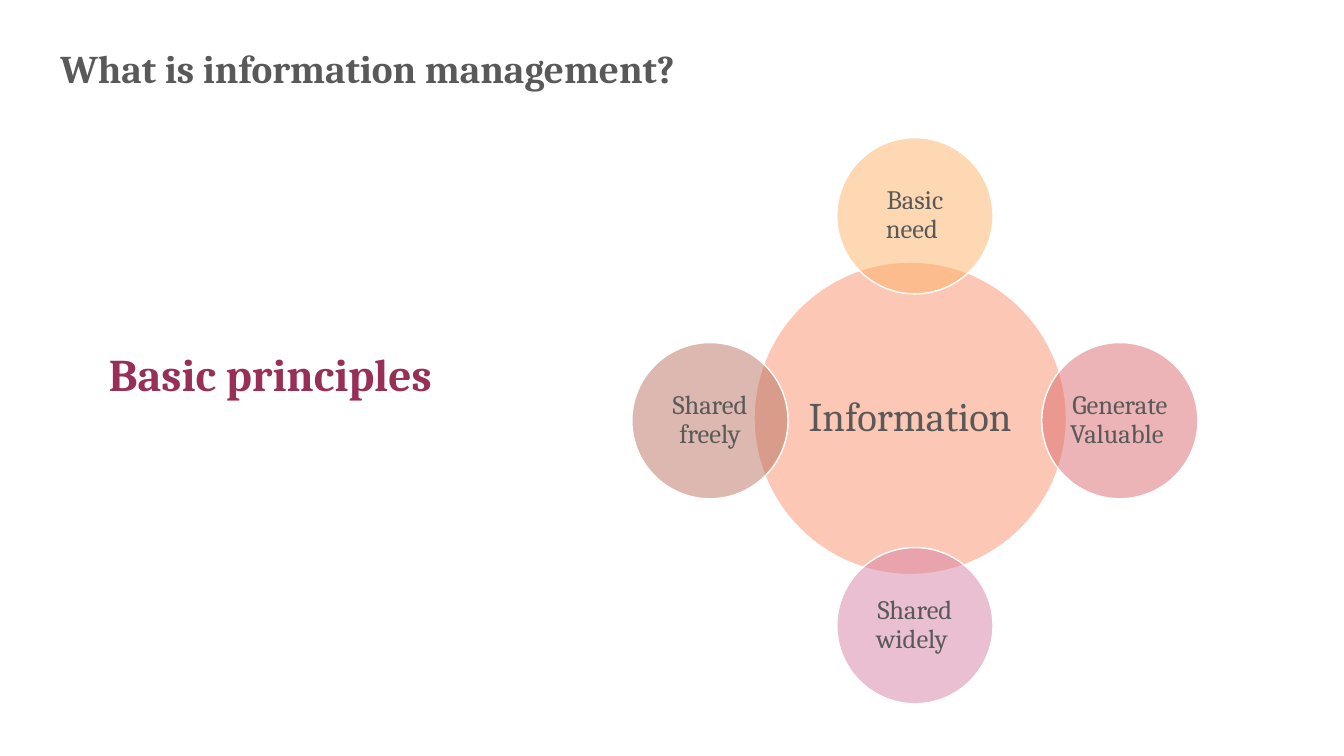
from dataclasses import dataclass
from math import cos, radians, sin

from pptx import Presentation
from pptx.dml.color import RGBColor
from pptx.enum.shapes import MSO_SHAPE as Preset
from pptx.enum.text import MSO_ANCHOR as Anchor, MSO_AUTO_SIZE as AutoSize, PP_ALIGN as Align
from pptx.oxml.ns import qn
from pptx.slide import Slide
from pptx.text.text import TextFrame
from pptx.util import Pt
from lxml.etree import SubElement

FONT = "Cambria"
COLOURS = {
    "title": "972F57",
    "text": "595959",
    "outline": "FFFFFF",
    "hub": "FA906A",
    "need": "FCB268",
    "valuable": "DB6B70",
    "widely": "D680A5",
    "freely": "BA7362",
}
ORBIT_CENTRE = (653.5, 300.5)
ORBIT_RADIUS = 146.4


@dataclass(frozen=True)
class Circle:
    text: str
    colour: str
    centre_x: float
    centre_y: float
    diameter: float
    font_size: float
    inset: float


def satellite(text: str, colour: str, angle: float) -> Circle:
    """Place a small circle on the orbit, angle in degrees clockwise from the right."""
    centre_x = ORBIT_CENTRE[0] + ORBIT_RADIUS * cos(radians(angle))
    centre_y = ORBIT_CENTRE[1] + ORBIT_RADIUS * sin(radians(angle))
    return Circle(text, colour, centre_x, centre_y, 111.6, 19, 2)


CIRCLES = [
    Circle("Information", "hub", 650.2, 298.8, 223.2, 29, 3),
    satellite("Basic need ", "need", -90),
    satellite("Generate Valuable ", "valuable", 0),
    satellite("Shared widely ", "widely", 90),
    satellite("Shared freely", "freely", 180),
]


def rgb(name: str) -> RGBColor:
    return RGBColor.from_string(COLOURS[name])


def write(frame: TextFrame, text: str, size: float, colour: str, bold: bool = False,
          align: Align = Align.LEFT, line_spacing: float = 1.0) -> None:
    frame.word_wrap = True
    paragraph = frame.paragraphs[0]
    paragraph.alignment = align
    paragraph.line_spacing = line_spacing
    paragraph.space_before = Pt(0)
    run = paragraph.add_run()
    run.text = text
    run.font.name = FONT
    run.font.size = Pt(size)
    run.font.bold = bold
    run.font.color.rgb = rgb(colour)


def add_circle(slide: Slide, circle: Circle) -> None:
    radius = circle.diameter / 2
    shape = slide.shapes.add_shape(
        Preset.OVAL, Pt(circle.centre_x - radius), Pt(circle.centre_y - radius),
        Pt(circle.diameter), Pt(circle.diameter))
    shape.shadow.inherit = False
    shape.fill.solid()
    shape.fill.fore_color.rgb = rgb(circle.colour)
    fill_colour = shape.fill._xPr.find(qn("a:solidFill"))[0]
    SubElement(fill_colour, qn("a:alpha"), val="50000")
    shape.line.color.rgb = rgb("outline")
    shape.line.width = Pt(1)
    frame = shape.text_frame
    frame.margin_left = frame.margin_right = Pt(circle.inset)
    frame.margin_top = frame.margin_bottom = Pt(circle.inset)
    frame.vertical_anchor = Anchor.MIDDLE
    write(frame, circle.text, circle.font_size, "text", align=Align.CENTER, line_spacing=0.9)


def add_title(slide: Slide) -> None:
    title = slide.shapes.title
    title.left, title.top, title.width, title.height = Pt(70.6), Pt(252), Pt(273.6), Pt(38.2)
    title.text_frame.auto_size = AutoSize.NONE
    title.text_frame.vertical_anchor = Anchor.BOTTOM
    write(title.text_frame, "Basic principles", 32.4, "title", bold=True, line_spacing=0.9)


def add_heading(slide: Slide) -> None:
    heading = slide.shapes.add_textbox(Pt(36), Pt(28), Pt(617.8), Pt(41))
    heading.text_frame.auto_size = AutoSize.SHAPE_TO_FIT_TEXT
    write(heading.text_frame, "What is information management?", 28, "text", bold=True)


def main() -> None:
    presentation = Presentation()
    presentation.slide_width, presentation.slide_height = Pt(960), Pt(540)
    title_only = presentation.slide_layouts[5]
    slide = presentation.slides.add_slide(title_only)
    add_title(slide)
    for circle in CIRCLES:
        add_circle(slide, circle)
    add_heading(slide)
    presentation.save("out.pptx")


if __name__ == "__main__":
    main()
